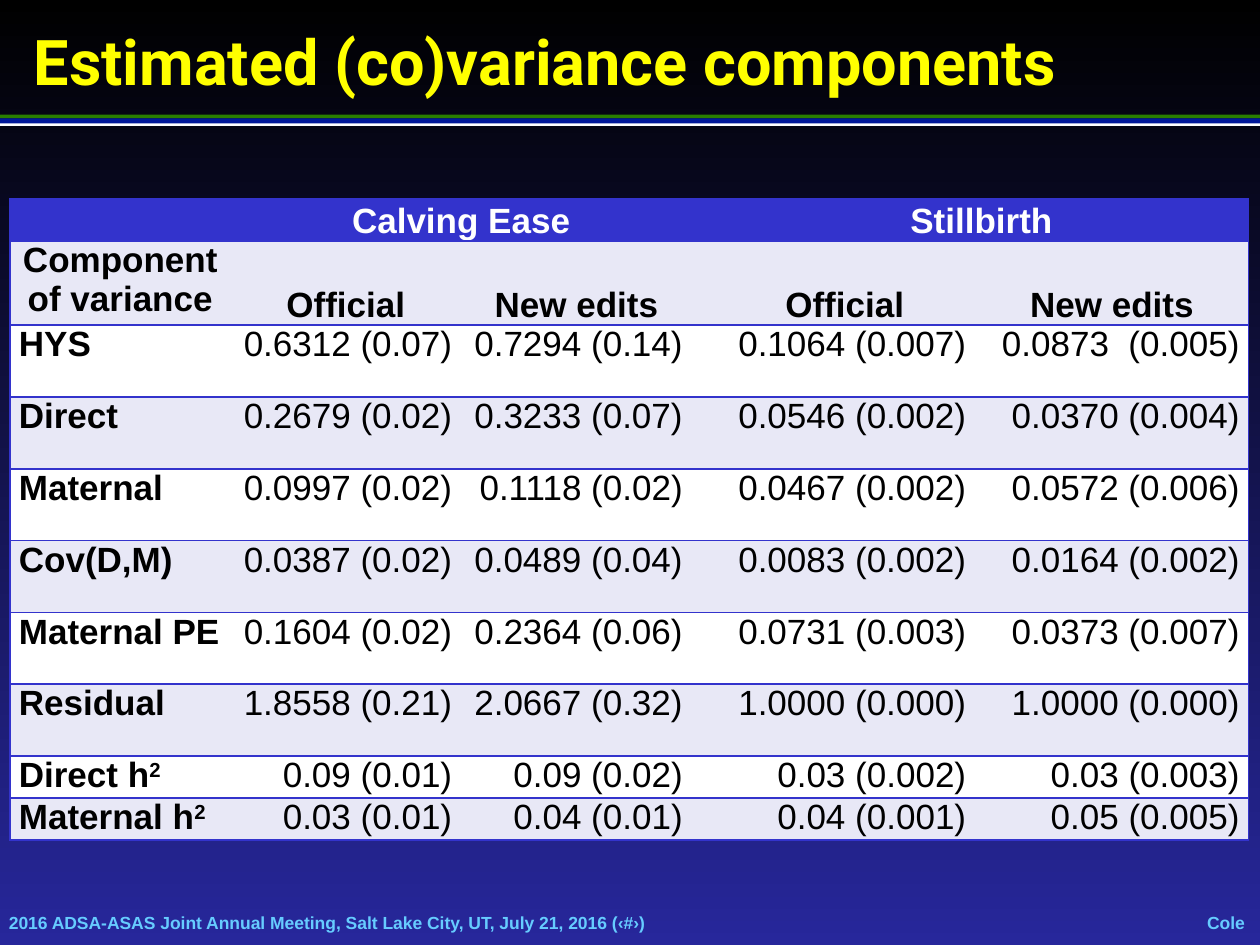
import lxml.etree
import pptx
import pptx.dml.color
import pptx.enum.shapes
import pptx.enum.text
import pptx.oxml.ns
import pptx.util

Inches = pptx.util.Inches
Pt = pptx.util.Pt
RGBColor = pptx.dml.color.RGBColor
ALIGN = pptx.enum.text.PP_ALIGN
ANCHOR = pptx.enum.text.MSO_ANCHOR
qn = pptx.oxml.ns.qn

BLACK = RGBColor(0x00, 0x00, 0x00)
WHITE = RGBColor(0xFF, 0xFF, 0xFF)
NAVY = RGBColor(0x27, 0x27, 0x9B)
YELLOW = RGBColor(0xFF, 0xFF, 0x00)
SKY = RGBColor(0x66, 0xCC, 0xFF)
GREEN = RGBColor(0x2A, 0x7E, 0x00)
BLUE = RGBColor(0x00, 0x17, 0x99)
INDIGO = RGBColor(0x33, 0x33, 0xCC)
LAVENDER = RGBColor(0xE8, 0xE8, 0xF6)
NO_STYLE = "{2D5ABB26-0587-4C30-8999-92F81FD0307C}"


def add_label(page, text, left, top, width, height, size, font, color, margins, wrap=True):
    box = page.shapes.add_textbox(Inches(left), Inches(top), Inches(width), Inches(height))
    frame = box.text_frame
    frame.word_wrap = wrap
    frame.vertical_anchor = ANCHOR.MIDDLE
    frame.margin_left = frame.margin_right = Inches(margins[0])
    frame.margin_top = frame.margin_bottom = Inches(margins[1])
    para = frame.paragraphs[0]
    para.text = text
    para.font.name = font
    para.font.size = Pt(size)
    para.font.bold = True
    para.font.color.rgb = color
    return para


def add_border(cell, side):
    line = lxml.etree.SubElement(cell._tc.get_or_add_tcPr(), qn("a:ln" + side), w=str(Pt(1)))
    fill = lxml.etree.SubElement(line, qn("a:solidFill"))
    lxml.etree.SubElement(fill, qn("a:srgbClr"), val=str(INDIGO))


deck = pptx.Presentation()
deck.slide_width = Inches(10)
deck.slide_height = Inches(7.5)
page = deck.slides.add_slide(deck.slide_layouts[6])

backdrop = page.background.fill
backdrop.gradient()
backdrop.gradient_angle = 270
for stop, color, position in zip(backdrop.gradient_stops, (BLACK, NAVY), (0, 1)):
    stop.color.rgb = color
    stop.position = position

add_label(page, "2016 ADSA-ASAS Joint Annual Meeting, Salt Lake City, UT, July 21, 2016 (‹#›)",
          0.07, 7.24, 8.09, 0.17, 10, "Arial", SKY, (0, 0))
author = add_label(page, "Cole", 9.58, 7.24, 0.3, 0.17, 10, "Arial", SKY, (0, 0), wrap=False)
author.alignment = ALIGN.CENTER

for top, height, color in ((0.91, 0.03, GREEN), (0.97, 0.03, WHITE), (0.94, 0.04, BLUE)):
    stripe = page.shapes.add_shape(pptx.enum.shapes.MSO_SHAPE.RECTANGLE,
                                   0, Inches(top), Inches(10), Inches(height))
    stripe.shadow.inherit = False
    stripe.fill.solid()
    stripe.fill.fore_color.rgb = color
    stripe.line.fill.background()

add_label(page, "Estimated (co)variance components",
          0.17, 0.13, 9.66, 0.7, 36, "Roboto", YELLOW, (0.1, 0.05))

rows = [
    ("", "Calving Ease", "", "", "Stillbirth", ""),
    ("Component of variance", "Official", "New edits", "", "Official", "New edits"),
    ("HYS", "0.6312 (0.07)", "0.7294 (0.14)", "", "0.1064 (0.007)", "0.0873  (0.005)"),
    ("Direct", "0.2679 (0.02)", "0.3233 (0.07)", "", "0.0546 (0.002)", "0.0370 (0.004)"),
    ("Maternal", "0.0997 (0.02)", "0.1118 (0.02)", "", "0.0467 (0.002)", "0.0572 (0.006)"),
    ("Cov(D,M)", "0.0387 (0.02)", "0.0489 (0.04)", "", "0.0083 (0.002)", "0.0164 (0.002)"),
    ("Maternal PE", "0.1604 (0.02)", "0.2364 (0.06)", "", "0.0731 (0.003)", "0.0373 (0.007)"),
    ("Residual", "1.8558 (0.21)", "2.0667 (0.32)", "", "1.0000 (0.000)", "1.0000 (0.000)"),
    ("Direct h²", "0.09 (0.01)", "0.09 (0.02)", "", "0.03 (0.002)", "0.03 (0.003)"),
    ("Maternal h²", "0.03 (0.01)", "0.04 (0.01)", "", "0.04 (0.001)", "0.05 (0.005)"),
]
widths = [1.75, 1.83, 1.83, 0.18, 2.07, 2.17]
heights = [0.31, 0.62] + [0.57] * 6 + [0.31] * 2

frame = page.shapes.add_table(len(rows), len(widths), Inches(0.08), Inches(1.58),
                              Inches(sum(widths)), Inches(sum(heights)))
table = frame.table
table._tbl.tblPr.find(qn("a:tableStyleId")).text = NO_STYLE
for column, width in zip(table.columns, widths):
    column.width = Inches(width)
for row, height in zip(table.rows, heights):
    row.height = Inches(height)

for row_index, texts in enumerate(rows):
    for column_index, text in enumerate(texts):
        cell = table.cell(row_index, column_index)
        heading = row_index < 2
        if column_index == 0:
            add_border(cell, "L")
        if column_index == len(widths) - 1:
            add_border(cell, "R")
        add_border(cell, "T")
        add_border(cell, "B")
        cell.fill.solid()
        cell.fill.fore_color.rgb = INDIGO if row_index == 0 else (WHITE, LAVENDER)[row_index % 2]
        cell.margin_left = cell.margin_right = Inches(0.07)
        cell.margin_top = cell.margin_bottom = 0
        cell.vertical_anchor = ANCHOR.BOTTOM if heading and column_index else ANCHOR.TOP
        para = cell.text_frame.paragraphs[0]
        if heading:
            para.alignment = ALIGN.CENTER
        else:
            para.alignment = ALIGN.RIGHT if column_index else ALIGN.LEFT
        para.font.name = "Arial"
        para.font.size = Pt(20)
        para.font.bold = heading or column_index == 0
        para.font.color.rgb = WHITE if row_index == 0 else BLACK
        if text:
            para.add_run().text = text.removesuffix("²")
        if text.endswith("²"):
            span = para.add_run()
            span.text = "2"
            span._r.get_or_add_rPr().set("baseline", "30000")

for first in (1, 4):
    table.cell(0, first).merge(table.cell(0, first + 1))
add_border_cell = table.cell(0, 4)
right_edge = table.cell(0, 5)._tc.tcPr.find(qn("a:lnR"))
add_border_cell._tc.tcPr.insert(0, right_edge)

deck.save("out.pptx")
